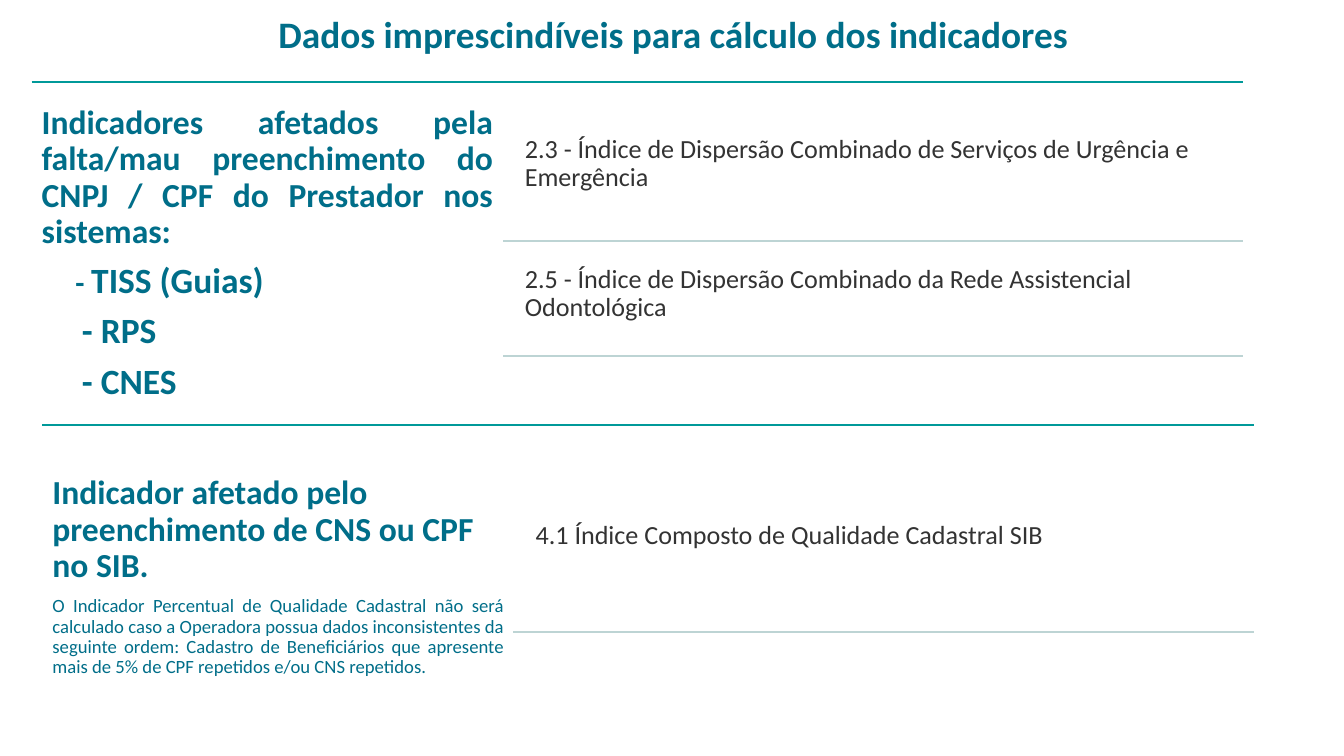
from dataclasses import dataclass

import pptx
import pptx.dml.color
import pptx.enum.shapes
import pptx.enum.text
import pptx.oxml.ns
import pptx.util
from lxml import etree

PX = 9144
BLUE, TEAL, PALE, GREY = "006E89", "009999", "BDD4D4", "333333"
ALIGN = pptx.enum.text.PP_ALIGN
ANCHOR = pptx.enum.text.MSO_ANCHOR


@dataclass
class Run:
    text: str
    size: int
    color: str = BLUE
    bold: bool = True


@dataclass
class Para:
    runs: list[Run]
    align: ALIGN = ALIGN.LEFT
    indent: int = 0


@dataclass
class Rule:
    x1: int
    x2: int
    y: int
    color: str


def px(value: int) -> pptx.util.Emu:
    return pptx.util.Emu(value * PX)


def rgb(color: str) -> pptx.dml.color.RGBColor:
    return pptx.dml.color.RGBColor.from_string(color)


def add_text(s, paras: list[Para], box: tuple[int, int, int, int], *,
             inset: int = 12, anchor=ANCHOR.TOP, spacing: float = 0.9,
             after: int = 13) -> None:
    tf = s.shapes.add_textbox(*map(px, box)).text_frame
    tf.word_wrap = True
    tf.vertical_anchor = anchor
    tf.margin_left = tf.margin_right = px(inset)
    tf.margin_top = tf.margin_bottom = px(inset)
    for i, para in enumerate(paras):
        p = tf.add_paragraph() if i else tf.paragraphs[0]
        p.alignment = para.align
        p.line_spacing = spacing
        p.space_after = pptx.util.Pt(after)
        if para.indent:
            p._p.get_or_add_pPr().set("marL", str(px(para.indent)))
        for run in para.runs:
            r = p.add_run()
            r.text = run.text
            r.font.name = "Calibri"
            r.font.size = pptx.util.Pt(run.size)
            r.font.bold = run.bold
            r.font.color.rgb = rgb(run.color)


def add_rule(s, rule: Rule) -> None:
    line = s.shapes.add_connector(
        pptx.enum.shapes.MSO_CONNECTOR.STRAIGHT,
        px(rule.x1), px(rule.y), px(rule.x2), px(rule.y))
    line.line.color.rgb = rgb(rule.color)
    line.line.width = pptx.util.Pt(2)
    etree.SubElement(line._element.spPr, pptx.oxml.ns.qn("a:effectLst"))


def add_indicator(s, text: str, box: tuple[int, int, int, int],
                  anchor=ANCHOR.TOP) -> None:
    add_text(s, [Para([Run(text, 28, GREY, False)])], box, anchor=anchor)


RULES = [
    Rule(47, 1850, 122, TEAL),
    Rule(749, 1850, 358, PALE),
    Rule(749, 1850, 530, PALE),
    Rule(63, 1866, 633, TEAL),
    Rule(764, 1866, 940, PALE),
]

PROVIDER = [
    Para([Run("Indicadores afetados pela falta/mau preenchimento do CNPJ / CPF "
              "do Prestador nos sistemas:", 36)], ALIGN.JUSTIFY),
    Para([Run("- ", 32), Run("TISS (Guias)", 38)], ALIGN.JUSTIFY, 50),
    Para([Run("- RPS", 38)], ALIGN.JUSTIFY, 60),
    Para([Run("- CNES", 38)], ALIGN.JUSTIFY, 60),
]

REGISTRY = [
    Para([Run("Indicador afetado pelo preenchimento de CNS ou CPF no SIB.", 36)]),
    Para([Run("O Indicador Percentual de Qualidade Cadastral não será calculado "
              "caso a Operadora possua dados inconsistentes da seguinte ordem: "
              "Cadastro de Beneficiários que apresente mais de 5% de CPF "
              "repetidos e/ou CNS repetidos.", 20, bold=False)], ALIGN.JUSTIFY),
]


def main() -> None:
    prs = pptx.Presentation()
    prs.slide_width, prs.slide_height = px(2000), px(1125)
    s = prs.slides.add_slide(prs.slide_layouts[6])

    title = Run("Dados imprescindíveis para cálculo dos indicadores", 40)
    add_text(s, [Para([title], ALIGN.CENTER)], (102, 11, 1800, 188),
             inset=5, spacing=1.0, after=0)
    for rule in RULES:
        add_rule(s, rule)

    add_text(s, PROVIDER, (47, 122, 702, 511), inset=15, anchor=ANCHOR.MIDDLE)
    add_indicator(s, "2.3 - Índice de Dispersão Combinado de Serviços de "
                     "Urgência e Emergência", (769, 190, 1081, 210))
    add_indicator(s, "2.5 - Índice de Dispersão Combinado da Rede Assistencial "
                     "Odontológica", (769, 383, 1081, 146))

    add_text(s, REGISTRY, (63, 633, 702, 450), inset=15, anchor=ANCHOR.MIDDLE)
    add_indicator(s, "4.1 Índice Composto de Qualidade Cadastral SIB",
                  (785, 655, 1081, 285), ANCHOR.MIDDLE)
    prs.save("out.pptx")


if __name__ == "__main__":
    main()
